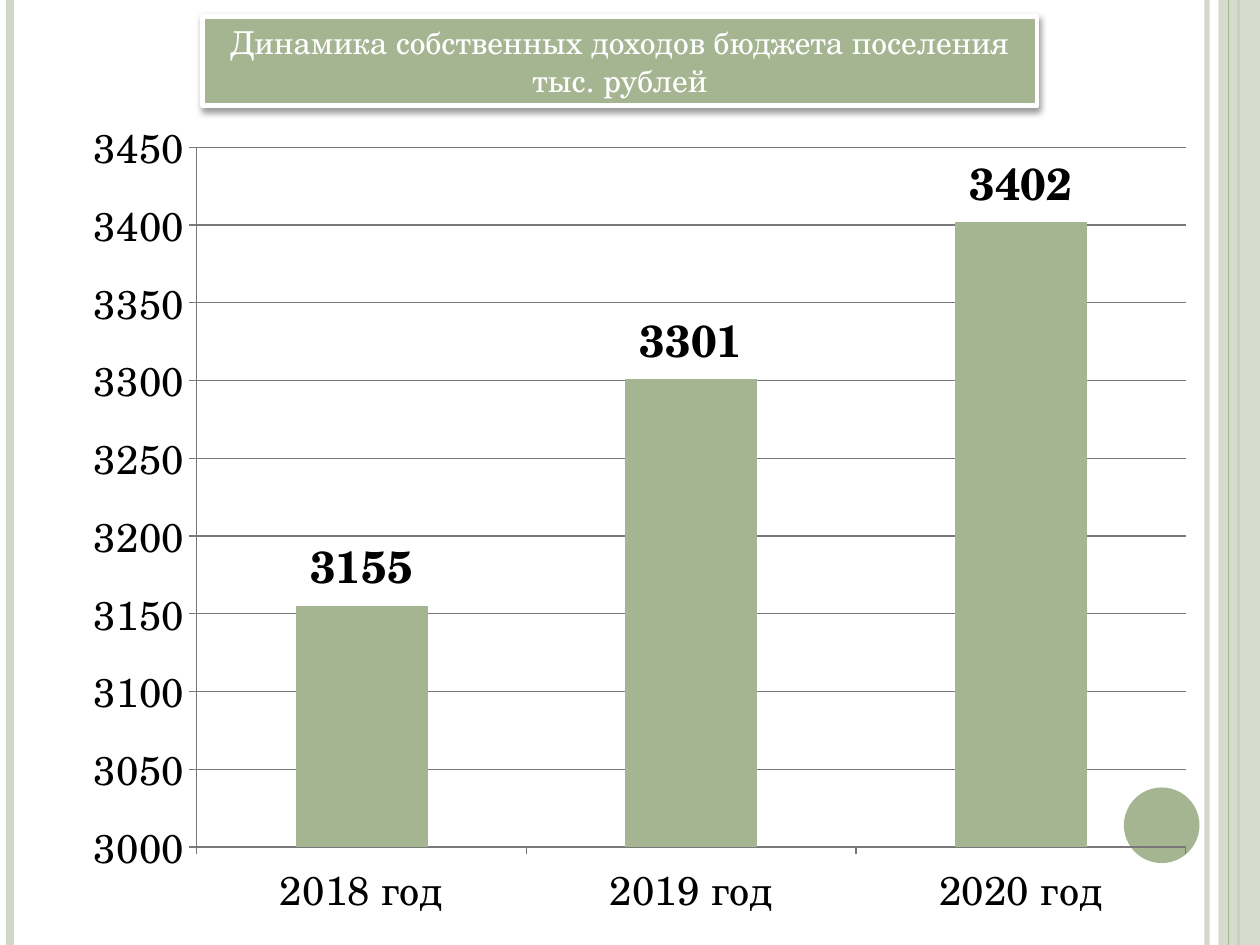
import dataclasses

import lxml.etree
import pptx
import pptx.chart.data
import pptx.dml.color
import pptx.enum.chart
import pptx.enum.shapes
import pptx.enum.text
import pptx.oxml
import pptx.oxml.ns
import pptx.util

Inches = pptx.util.Inches
Pt = pptx.util.Pt
qn = pptx.oxml.ns.qn


@dataclasses.dataclass(frozen=True)
class Theme:
    font: str = "TeX Gyre Schola"
    green: str = "A5B592"
    pale: str = "CFD7C7"
    white: str = "FFFFFF"
    black: str = "000000"
    gray: str = "787878"
    title_size: float = 18
    chart_size: float = 23
    label_size: float = 25.6


THEME = Theme()
SLIDE_W, SLIDE_H = 10, 7.5


def rgb(color):
    return pptx.dml.color.RGBColor.from_string(color)


def apply(obj, values):
    for name, value in values.items():
        setattr(obj, name, value)


def set_font(font, size, color, bold=False):
    apply(font, {"name": THEME.font, "size": Pt(size), "bold": bold})
    font.color.rgb = rgb(color)


def set_line(line, color, width):
    line.color.rgb = rgb(color)
    line.width = Pt(width)


def set_alpha(sp, percent):
    color = next(sp._element.spPr.iter(qn("a:srgbClr")))
    lxml.etree.SubElement(color, qn("a:alpha"), val=str(percent * 1000))


def add_line(s, x, color, width, alpha=None):
    """Full-height vertical stripe."""
    line = s.shapes.add_connector(
        pptx.enum.shapes.MSO_CONNECTOR.STRAIGHT,
        Inches(x), Inches(0), Inches(x), Inches(SLIDE_H))
    set_line(line.line, color, width)
    if alpha:
        set_alpha(line, alpha)
    lxml.etree.SubElement(line._element.spPr, qn("a:effectLst"))


def add_shape(s, kind, box, fill, alpha=None):
    sp = s.shapes.add_shape(kind, *map(Inches, box))
    sp.shadow.inherit = False
    sp.fill.solid()
    sp.fill.fore_color.rgb = rgb(fill)
    sp.line.fill.background()
    if alpha:
        set_alpha(sp, alpha)
    return sp


def add_drop_shadow(sp, blur, dist, alpha):
    effects = sp._element.spPr.find(qn("a:effectLst"))
    shadow = lxml.etree.SubElement(
        effects, qn("a:outerShdw"), blurRad=str(Pt(blur)), dist=str(Pt(dist)),
        dir=str(90 * 60000), rotWithShape="0")
    color = lxml.etree.SubElement(shadow, qn("a:srgbClr"), val=THEME.black)
    lxml.etree.SubElement(color, qn("a:alpha"), val=str(alpha * 1000))


def add_title(s, text, box):
    sp = add_shape(s, pptx.enum.shapes.MSO_SHAPE.RECTANGLE, box, THEME.green)
    set_line(sp.line, THEME.white, 2.75)
    add_drop_shadow(sp, blur=4, dist=2, alpha=40)
    tf = sp.text_frame
    apply(tf, {"word_wrap": True,
               "auto_size": pptx.enum.text.MSO_AUTO_SIZE.SHAPE_TO_FIT_TEXT,
               "vertical_anchor": pptx.enum.text.MSO_ANCHOR.MIDDLE})
    p = tf.paragraphs[0]
    p.alignment = pptx.enum.text.PP_ALIGN.CENTER
    r = p.add_run()
    r.text = text
    set_font(r.font, THEME.title_size, THEME.white)


def set_plot_layout(chart, **fractions):
    """Fix the inner plot area, as fractions of the chart frame."""
    area = chart._chartSpace.chart.plotArea
    for old in area.findall(qn("c:layout")):
        area.remove(old)
    layout = lxml.etree.Element(qn("c:layout"))
    area.insert(0, layout)
    manual = lxml.etree.SubElement(layout, qn("c:manualLayout"))
    values = {"layoutTarget": "inner", "xMode": "edge", "yMode": "edge", **fractions}
    for name, value in values.items():
        lxml.etree.SubElement(manual, qn("c:" + name), val=str(value))


def add_column_chart(s, cats, vals, box):
    data = pptx.chart.data.CategoryChartData()
    data.categories = cats
    data.add_series("Series 1", vals)
    chart = s.shapes.add_chart(
        pptx.enum.chart.XL_CHART_TYPE.COLUMN_CLUSTERED,
        *map(Inches, box), data).chart
    apply(chart, {"has_legend": False, "has_title": False})
    set_font(chart.font, THEME.chart_size, THEME.black)
    set_plot_layout(chart, x=0.11, y=0.05, w=0.87, h=0.84)

    # Axes and gridlines
    outside = pptx.enum.chart.XL_TICK_MARK.OUTSIDE
    for axis in (chart.category_axis, chart.value_axis):
        axis.major_tick_mark = outside
        set_line(axis.format.line, THEME.gray, 0.75)
    apply(chart.value_axis, {"minimum_scale": 3000, "maximum_scale": 3450,
                             "major_unit": 50, "has_major_gridlines": True})
    set_line(chart.value_axis.major_gridlines.format.line, THEME.gray, 0.75)

    # Columns and their values
    plot = chart.plots[0]
    apply(plot, {"gap_width": 150, "vary_by_categories": False})
    series = plot.series[0]
    series.format.fill.solid()
    series.format.fill.fore_color.rgb = rgb(THEME.green)
    labels = series.data_labels
    apply(labels, {"show_value": True,
                   "position": pptx.enum.chart.XL_LABEL_POSITION.OUTSIDE_END})
    set_font(labels.font, THEME.label_size, THEME.black, bold=True)


def main():
    prs = pptx.Presentation()
    apply(prs, {"slide_width": Inches(SLIDE_W), "slide_height": Inches(SLIDE_H)})
    s = prs.slides.add_slide(prs.slide_layouts[6])
    shapes = pptx.enum.shapes.MSO_SHAPE

    # Side stripes and disc
    add_line(s, 9.58, THEME.pale, 3, alpha=93)
    add_line(s, 0.08, THEME.pale, 4.5)
    add_line(s, 9.83, THEME.green, 1.5)
    add_shape(s, shapes.RECTANGLE, (9.67, 0, 0.33, SLIDE_H), THEME.pale, alpha=87)
    add_line(s, 9.75, THEME.green, 0.75)
    add_shape(s, shapes.OVAL, (8.92, 6.25, 0.6, 0.6), THEME.green)

    # Title and chart
    add_title(s, "Динамика собственных доходов бюджета поселения тыс. рублей",
              (1.61, 0.13, 6.62, 0.71))
    add_column_chart(s, ("2018 год", "2019 год", "2020 год"), (3155, 3301, 3402),
                     (0.57, 0.84, 9.02, 6.61))

    prs.save("out.pptx")


if __name__ == "__main__":
    main()
